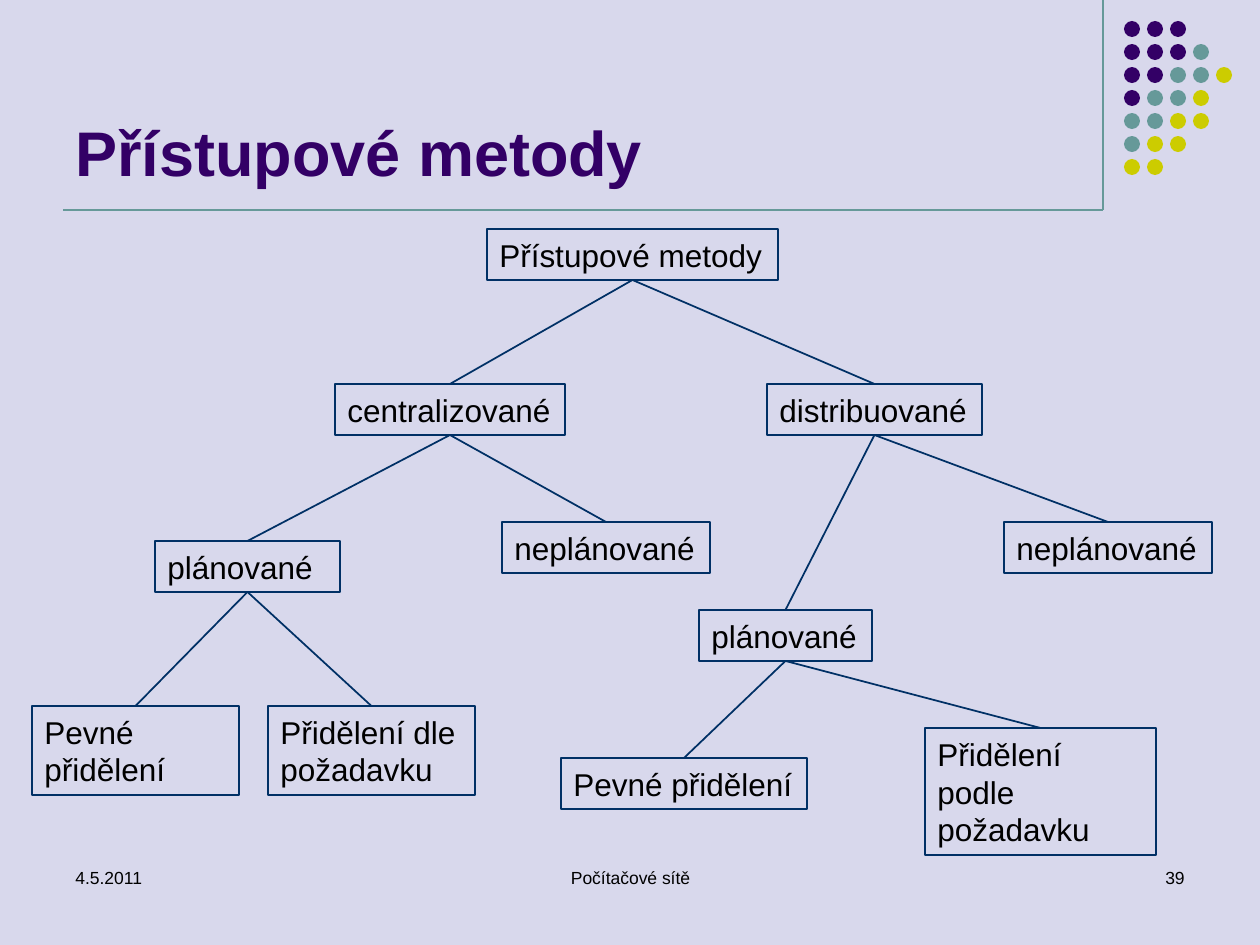
from lxml import etree
from pptx import Presentation
from pptx.dml.color import RGBColor
from pptx.enum.shapes import MSO_CONNECTOR, MSO_SHAPE
from pptx.enum.text import MSO_ANCHOR, MSO_AUTO_SIZE, PP_ALIGN
from pptx.oxml.ns import qn
from pptx.util import Emu, Pt

STRAIGHT = MSO_CONNECTOR.STRAIGHT
RECTANGLE, OVAL = MSO_SHAPE.RECTANGLE, MSO_SHAPE.OVAL
TOP, MIDDLE, BOTTOM = MSO_ANCHOR.TOP, MSO_ANCHOR.MIDDLE, MSO_ANCHOR.BOTTOM
LEFT, CENTER, RIGHT = PP_ALIGN.LEFT, PP_ALIGN.CENTER, PP_ALIGN.RIGHT
GROW = MSO_AUTO_SIZE.SHAPE_TO_FIT_TEXT
TOP_SIDE, BOTTOM_SIDE = 0, 2

FONT = "Arial"
COLORS = {
    "background": "D8D8EC", "text": "000000", "branch": "003065",
    "purple": "330066", "teal": "669999", "yellow": "CCCC00",
}

TITLE = ("Přístupové metody", (63, 16, 1040, 179))
FOOTERS = [
    ("4.5.2011", (63, 861, 294, 63), LEFT),
    ("Počítačové sítě", (431, 861, 399, 63), CENTER),
    ("39", (903, 861, 294, 63), RIGHT),
]
RULES = [(1103, 0, 1103, 210), (63, 210, 1103, 210)]

DOT_ROWS = ["PPP", "PPPT", "PPTTY", "PTTY", "TTYY", "TYY", "YY"]
DOT_COLORS = {"P": "purple", "T": "teal", "Y": "yellow"}
DOT_LEFT, DOT_TOP, DOT_PITCH, DOT_SIZE = 1124, 21, 23, 16

# key: (paragraphs, box, wraps, parent)
METHODS = {
    "root": (["Přístupové metody"], (487, 229, 291, 51), False, None),
    "central": (["centralizované"], (335, 384, 230, 51), False, "root"),
    "distributed": (["distribuované"], (767, 384, 215, 51), False, "root"),
    "distributed unplanned":
        (["neplánované"], (1004, 522, 208, 51), False, "distributed"),
    "distributed planned":
        (["plánované"], (699, 610, 173, 51), False, "distributed"),
    "distributed fixed":
        (["Pevné přidělení"], (561, 758, 246, 51), False, "distributed planned"),
    "distributed on demand":
        (["Přidělení podle", "požadavku"], (925, 728, 231, 127), True,
         "distributed planned"),
    "central unplanned":
        (["neplánované"], (502, 522, 208, 51), True, "central"),
    "central planned": (["plánované"], (155, 541, 185, 51), True, "central"),
    "central fixed":
        (["Pevné přidělení"], (32, 706, 207, 89), True, "central planned"),
    "central on demand":
        (["Přidělení dle požadavku"], (268, 706, 207, 89), True,
         "central planned"),
}


def px(length):
    return Emu(round(length * 914400 / 126))


def color(name):
    return RGBColor.from_string(COLORS[name])


def write(shape, paragraphs, size, ink="text", bold=False, align=LEFT, **frame_format):
    frame = shape.text_frame
    for attribute, value in frame_format.items():
        setattr(frame, attribute, value)
    for index, text in enumerate(paragraphs):
        paragraph = frame.add_paragraph() if index else frame.paragraphs[0]
        paragraph.alignment = align
        run = paragraph.add_run()
        run.text = text
        for attribute, value in {"name": FONT, "size": Pt(size), "bold": bold}.items():
            setattr(run.font, attribute, value)
        run.font.color.rgb = color(ink)


def add_line(slide, ends, ink, width):
    line = slide.shapes.add_connector(STRAIGHT, *map(px, ends))
    line.line.color.rgb = color(ink)
    line.line.width = Pt(width)
    etree.SubElement(line._element.spPr, qn("a:effectLst"))
    return line


def add_dots(slide):
    for row, codes in enumerate(DOT_ROWS):
        for column, code in enumerate(codes):
            dot = slide.shapes.add_shape(
                OVAL, px(DOT_LEFT + column * DOT_PITCH),
                px(DOT_TOP + row * DOT_PITCH), px(DOT_SIZE), px(DOT_SIZE))
            dot.shadow.inherit = False
            dot.fill.solid()
            dot.fill.fore_color.rgb = color(DOT_COLORS[code])
            dot.line.fill.background()


def add_method(slide, paragraphs, box, wraps):
    method = slide.shapes.add_shape(RECTANGLE, *map(px, box))
    method.shadow.inherit = False
    method.fill.background()
    method.line.color.rgb = color("branch")
    method.line.width = Pt(1)
    write(method, paragraphs, 18, word_wrap=wraps, auto_size=GROW,
          vertical_anchor=MIDDLE)
    return method


def add_tree(slide):
    boxes = {}
    for key, (paragraphs, box, wraps, parent) in METHODS.items():
        boxes[key] = add_method(slide, paragraphs, box, wraps)
        if parent:
            branch = add_line(slide, (0, 0, 0, 0), "branch", 1)
            branch.begin_connect(boxes[parent], BOTTOM_SIDE)
            branch.end_connect(boxes[key], TOP_SIDE)


def main():
    deck = Presentation()
    deck.slide_width, deck.slide_height = px(1260), px(945)
    slide = deck.slides.add_slide(deck.slide_layouts[6])
    slide.background.fill.solid()
    slide.background.fill.fore_color.rgb = color("background")

    for ends in RULES:
        add_line(slide, ends, "teal", 0.75)
    add_dots(slide)

    title, title_box = TITLE
    write(slide.shapes.add_textbox(*map(px, title_box)), [title], 36, "purple",
          bold=True, word_wrap=True, vertical_anchor=BOTTOM)
    for text, box, align in FOOTERS:
        write(slide.shapes.add_textbox(*map(px, box)), [text], 10, align=align,
              word_wrap=True, vertical_anchor=TOP)
    add_tree(slide)
    deck.save("out.pptx")


if __name__ == "__main__":
    main()
